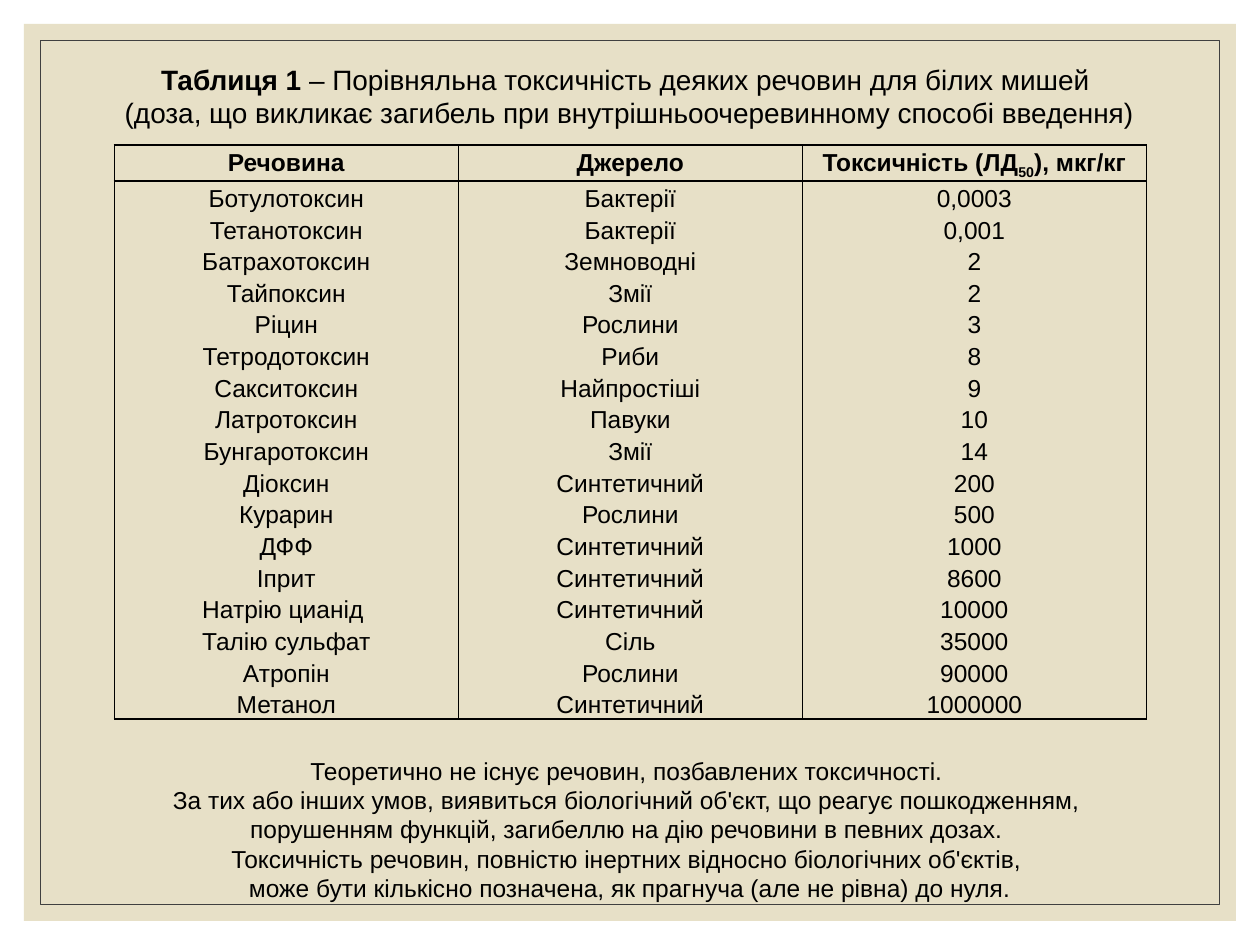
from lxml.etree import SubElement
from pptx import Presentation
from pptx.dml.color import RGBColor
from pptx.enum.shapes import MSO_SHAPE
from pptx.enum.text import MSO_ANCHOR, MSO_AUTO_SIZE, PP_ALIGN
from pptx.oxml.ns import qn
from pptx.util import Pt

BLACK = RGBColor(0x00, 0x00, 0x00)
SAND = RGBColor(0xE7, 0xE0, 0xC7)
GREY = RGBColor(0x40, 0x40, 0x40)

# Content: a line is a list of (text, format) runs
TITLE = [
    [("Таблиця 1 ", {"bold": True}),
     ("– Порівняльна токсичність деяких речовин для білих мишей ", {})],
    [("(доза, що викликає загибель при внутрішньоочеревинному способі введення)", {})],
]
HEADERS = [
    [("Речовина", {})],
    [("Джерело", {})],
    [("Токсичність (ЛД", {}), ("50", {"baseline": -25000}), ("), мкг/кг", {})],
]
TOXINS = [
    ("Ботулотоксин", "Бактерії", "0,0003"),
    ("Тетанотоксин", "Бактерії", "0,001"),
    ("Батрахотоксин", "Земноводні", "2"),
    ("Тайпоксин", "Змії", "2"),
    ("Ріцин", "Рослини", "3"),
    ("Тетродотоксин", "Риби", "8"),
    ("Сакситоксин", "Найпростіші", "9"),
    ("Латротоксин", "Павуки", "10"),
    ("Бунгаротоксин", "Змії", "14"),
    ("Діоксин", "Синтетичний", "200"),
    ("Курарин", "Рослини", "500"),
    ("ДФФ", "Синтетичний", "1000"),
    ("Іприт", "Синтетичний", "8600"),
    ("Натрію цианід ", "Синтетичний", "10000"),
    ("Талію сульфат", "Сіль", "35000"),
    ("Атропін", "Рослини", "90000"),
    ("Метанол", "Синтетичний", "1000000"),
]
NOTE = [
    "Теоретично не існує речовин, позбавлених токсичності. ",
    "За тих або інших умов, виявиться біологічний об'єкт, що реагує пошкодженням, ",
    "порушенням функцій, загибеллю на дію речовини в певних дозах. ",
    "Токсичність речовин, повністю інертних відносно біологічних об'єктів, ",
    "може бути кількісно позначена, як прагнуча (але не рівна) до нуля.",
]

# Layout in points
SLIDE_W, SLIDE_H = 720, 540
TABLE_X, TABLE_Y, COL_W = 65.3, 82.8, 196.6
ROW_HEIGHTS = (20.5, 307)


def write(tf, lines, size=14, bold=False, spacing=1.0):
    """Fill a text frame with centred paragraphs, one for each line."""
    for i, line in enumerate(lines):
        p = tf.paragraphs[0] if i == 0 else tf.add_paragraph()
        p.alignment = PP_ALIGN.CENTER
        p.line_spacing = spacing
        p.space_before = p.space_after = Pt(0)
        for text, fmt in [(line, {})] if isinstance(line, str) else line:
            r = p.add_run()
            r.text = text
            r.font.name, r.font.size = "Arial", Pt(size)
            r.font.bold = fmt.get("bold", bold)
            r.font.color.rgb = BLACK
            if "baseline" in fmt:
                r.font._element.set("baseline", str(fmt["baseline"]))


def place(sp, x, y, w, h):
    sp.left, sp.top, sp.width, sp.height = Pt(x), Pt(y), Pt(w), Pt(h)
    tf = sp.text_frame
    tf.word_wrap, tf.auto_size = True, MSO_AUTO_SIZE.NONE
    tf.vertical_anchor = MSO_ANCHOR.MIDDLE
    return tf


def add_panel(s, margin):
    sp = s.shapes.add_shape(MSO_SHAPE.RECTANGLE, Pt(margin), Pt(margin),
                            Pt(SLIDE_W - 2 * margin), Pt(SLIDE_H - 2 * margin))
    sp.shadow.inherit = False
    return sp


def add_borders(cell):
    tc_pr = cell._tc.get_or_add_tcPr()
    for i, side in enumerate(("lnL", "lnR", "lnT", "lnB")):
        ln = tc_pr.makeelement(qn(f"a:{side}"), {"w": str(Pt(1))})
        fill = SubElement(ln, qn("a:solidFill"))
        SubElement(fill, qn("a:srgbClr"), val=str(BLACK))
        tc_pr.insert(i, ln)


prs = Presentation()
prs.slide_width, prs.slide_height = Pt(SLIDE_W), Pt(SLIDE_H)
s = prs.slides.add_slide(prs.slide_layouts[1])
title, body = s.placeholders

# Background panel and thin frame, behind the text
panel, frame = add_panel(s, 13.7), add_panel(s, 23)
panel.fill.solid()
panel.fill.fore_color.rgb = SAND
panel.line.fill.background()
frame.fill.background()
frame.line.color.rgb, frame.line.width = GREY, Pt(0.5)
for i, sp in enumerate((panel, frame)):
    s.shapes.element.insert(2 + i, sp.element)

# Title
tf = place(title, 25.2, 14.4, 669, 85)
tf.margin_bottom = Pt(8)
write(tf, TITLE, size=16)

# Table: a header row, then one tall row listing each column
columns = list(zip(*TOXINS))
rows = [[[header] for header in HEADERS], columns]
table = s.shapes.add_table(len(rows), len(HEADERS), Pt(TABLE_X), Pt(TABLE_Y),
                           Pt(COL_W * len(HEADERS)), Pt(sum(ROW_HEIGHTS))).table
for col in table.columns:
    col.width = Pt(COL_W)
for i, (row, height) in enumerate(zip(rows, ROW_HEIGHTS)):
    table.rows[i].height = Pt(height)
    for j, lines in enumerate(row):
        cell = table.cell(i, j)
        cell.margin_left = cell.margin_right = Pt(5)
        cell.margin_top = cell.margin_bottom = 0
        cell.fill.background()
        add_borders(cell)
        write(cell.text_frame, lines, bold=i == 0, spacing=1.15)

# Closing note, without bullets
tf = place(body, 36, 427.7, 648, 92.2)
write(tf, NOTE)
for p in tf.paragraphs:
    p_pr = p._p.get_or_add_pPr()
    p_pr.set("marL", "0")
    p_pr.set("indent", "0")
    SubElement(p_pr, qn("a:buNone"))

prs.save("out.pptx")
